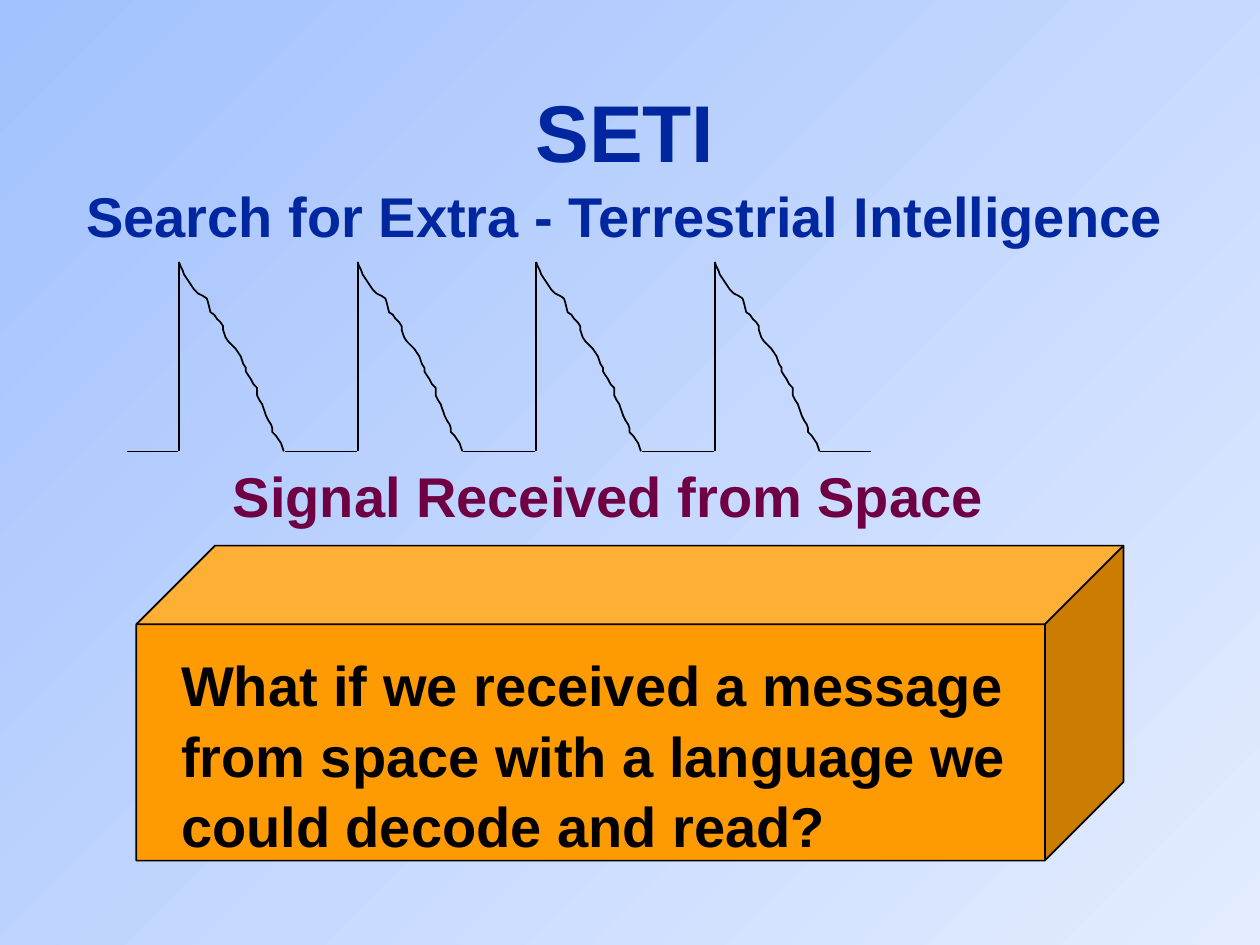
"""Build the SETI slide with a repeating signal and a question on a cube."""
from lxml.etree import SubElement
from pptx import Presentation
from pptx.dml.color import RGBColor
from pptx.enum.shapes import MSO_CONNECTOR, MSO_SHAPE
from pptx.enum.text import MSO_ANCHOR, PP_ALIGN
from pptx.oxml.ns import qn
from pptx.util import Cm, Pt

COLORS = {
    "sky": "A2C1FE",
    "pale": "E3ECFF",
    "heading": "00279F",
    "caption": "6E0043",
    "cube": "FE9B03",
    "ink": "000000",
}
DECAY = [
    (0, 0), (1, 3), (3, 7), (4, 10), (6, 13), (8, 16), (10, 19), (12, 22), (15, 25), (19, 27),
    (22, 29), (23, 32), (24, 36), (25, 40), (28, 42), (30, 45), (33, 48), (35, 51), (35, 54),
    (36, 57), (37, 60), (39, 63), (42, 66), (45, 69), (47, 72), (49, 75), (50, 78), (51, 81),
    (53, 84), (53, 87), (55, 90), (57, 93), (59, 97), (62, 100), (62, 103), (62, 106), (64, 110),
    (66, 113), (67, 116), (68, 119), (69, 122), (71, 126), (73, 129), (74, 132), (74, 135),
    (77, 138), (79, 141), (81, 144), (82, 147), (83, 150), (82, 147),
]
PULSE_COUNT = 4
FIRST_PEAK, PULSE_PITCH = 3.61, 3.6
PEAK_TOP, BASELINE = 5.28, 9.1


def add_text(slide, box, lines, color, alignment, anchor):
    text_box = slide.shapes.add_textbox(*[Cm(length) for length in box])
    frame = text_box.text_frame
    frame.word_wrap = True
    frame.vertical_anchor = anchor
    paragraph = frame.paragraphs[0]
    paragraph.alignment = alignment
    paragraph.line_spacing = 1.05
    for index, (text, size) in enumerate(lines):
        if index:
            paragraph.add_line_break()
        run = paragraph.add_run()
        run.text = text
        run.font.name = "Arial"
        run.font.size = Pt(size)
        run.font.bold = True
        run.font.color.rgb = RGBColor.from_string(COLORS[color])


def style_line(shape):
    shape.line.color.rgb = RGBColor.from_string(COLORS["ink"])
    shape.line.width = Pt(1)


presentation = Presentation()
presentation.slide_width = Cm(25.4)
presentation.slide_height = Cm(19.05)
slide = presentation.slides.add_slide(presentation.slide_layouts[6])

background = slide.background.fill
background.gradient()
background.gradient_angle = 315
for stop, name in zip(background.gradient_stops, ("sky", "pale")):
    stop.color.rgb = RGBColor.from_string(COLORS[name])

add_text(slide, (1.47, 9.1, 21.59, 1.7), [("Signal Received from Space", 32)],
         "caption", PP_ALIGN.CENTER, MSO_ANCHOR.MIDDLE)

signal = slide.shapes.add_group_shape()
for pulse in range(PULSE_COUNT):
    peak = FIRST_PEAK + pulse * PULSE_PITCH
    segments = [
        (peak - 1.04, BASELINE, peak - 0.02, BASELINE),
        (peak, BASELINE, peak, PEAK_TOP),
        (peak + 2.13, BASELINE, peak + 3.15, BASELINE),
    ]
    for segment in segments:
        connector = signal.shapes.add_connector(
            MSO_CONNECTOR.STRAIGHT, *[Cm(length) for length in segment])
        style_line(connector)
        SubElement(connector._element.spPr, qn("a:effectLst"))
    builder = signal.shapes.build_freeform(*DECAY[0], scale=Cm(0.0254))
    builder.add_line_segments(DECAY[1:], close=False)
    decay = builder.convert_to_shape(Cm(peak), Cm(PEAK_TOP))
    decay.fill.background()
    decay.shadow.inherit = False
    style_line(decay)

add_text(slide, (1.07, 1.7, 23.06, 3.18),
         [("SETI", 46), ("Search for Extra - Terrestrial Intelligence", 32)],
         "heading", PP_ALIGN.CENTER, MSO_ANCHOR.MIDDLE)

cube = slide.shapes.add_shape(MSO_SHAPE.CUBE, Cm(2.75), Cm(11), Cm(19.9), Cm(6.35))
cube.adjustments[0] = 0.25
cube.fill.solid()
cube.fill.fore_color.rgb = RGBColor.from_string(COLORS["cube"])
cube.shadow.inherit = False
style_line(cube)

question = "What if we received a message from space with a language we could decode and read?"
add_text(slide, (3.4, 12.93, 19.25, 4.32), [(question, 32)],
         "ink", PP_ALIGN.LEFT, MSO_ANCHOR.TOP)

presentation.save("out.pptx")
